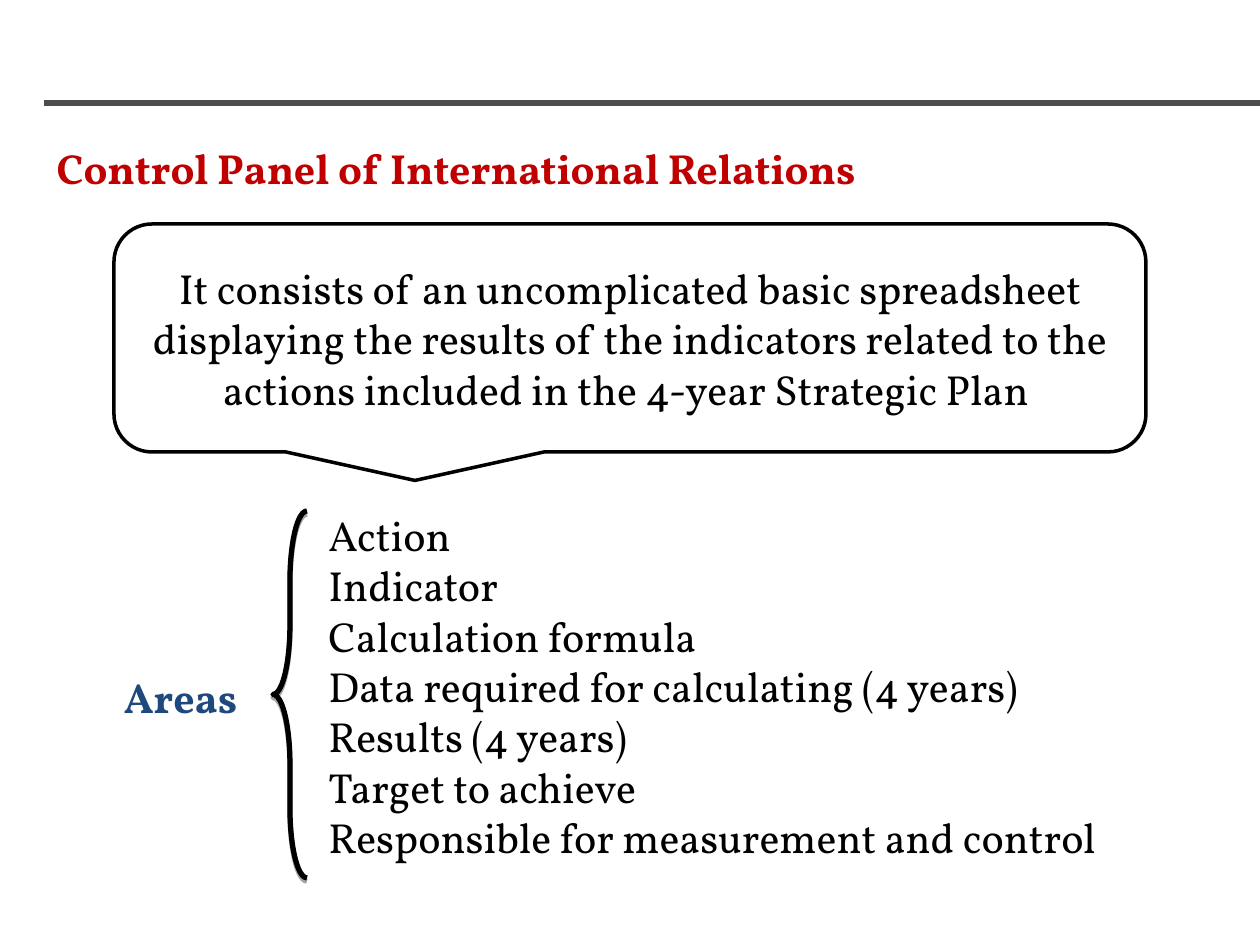
import dataclasses

import lxml.etree
import pptx
import pptx.dml.color
import pptx.enum.shapes
import pptx.enum.text
import pptx.oxml
import pptx.oxml.ns
import pptx.util

SHAPE = pptx.enum.shapes.MSO_SHAPE
ALIGN = pptx.enum.text.PP_ALIGN
ANCHOR = pptx.enum.text.MSO_ANCHOR

AREAS = [
    "Action",
    "Indicator",
    "Calculation formula",
    "Data required for calculating (4 years)",
    "Results (4 years)",
    "Target to achieve",
    "Responsible for measurement and control",
]
SUMMARY = (
    "It consists of an uncomplicated basic spreadsheet displaying the results of "
    "the indicators related to the actions included in the 4-year Strategic Plan "
)


@dataclasses.dataclass(frozen=True)
class Theme:
    """Colours, font and sizes of the slide."""

    face: str = "Vollkorn"
    size: int = 24
    ink: str = "000000"
    red: str = "C00000"
    blue: str = "1F497D"
    rule: str = "4D4D4D"
    thin: int = 2
    thick: int = 3


THEME = Theme()


def px(num):
    """Turn px into EMU."""
    return pptx.util.Emu(round(num * 914400 / 126))


def rgb(code):
    """Return the colour for a hex code."""
    return pptx.dml.color.RGBColor.from_string(code)


def write(shape, lines, color=THEME.ink, bold=False, align=ALIGN.LEFT, anchor=ANCHOR.TOP):
    """Fill a shape with evenly styled paragraphs."""
    frame = shape.text_frame
    frame.word_wrap = True
    frame.auto_size = pptx.enum.text.MSO_AUTO_SIZE.NONE
    frame.vertical_anchor = anchor
    frame.text = "\n".join(lines)
    for para in frame.paragraphs:
        para.alignment = align
        para.font.name = THEME.face
        para.font.size = pptx.util.Pt(THEME.size)
        para.font.bold = bold
        para.font.color.rgb = rgb(color)


def stroke(shape, color, width):
    """Set the line of a shape or connector."""
    shape.line.color.rgb = rgb(color)
    shape.line.width = pptx.util.Pt(width)


def outline(slide, kind, box, width):
    """Add an unfilled shape with a dark line."""
    shape = slide.shapes.add_shape(kind, *map(px, box))
    shape.shadow.inherit = False
    shape.fill.background()
    stroke(shape, THEME.ink, width)
    return shape


def label(slide, box, lines, **style):
    """Add a text box."""
    shape = slide.shapes.add_textbox(*map(px, box))
    write(shape, lines, **style)


def shade(shape):
    """Drop a soft shadow straight below a shape."""
    effect = shape._element.spPr.find(pptx.oxml.ns.qn("a:effectLst"))
    effect.append(pptx.oxml.parse_xml(
        f'<a:outerShdw {pptx.oxml.ns.nsdecls("a")} blurRad="0" dist="22860" '
        f'dir="5400000" rotWithShape="0"><a:srgbClr val="{THEME.ink}">'
        '<a:alpha val="35000"/></a:srgbClr></a:outerShdw>'
    ))


def header(slide, box):
    """Place the rule and the title below it."""
    left, top, width, height = box
    rule = slide.shapes.add_connector(
        pptx.enum.shapes.MSO_CONNECTOR.STRAIGHT,
        px(left), px(top), px(left + width), px(top),
    )
    stroke(rule, THEME.rule, THEME.thick)
    lxml.etree.SubElement(rule._element.spPr, pptx.oxml.ns.qn("a:effectLst"))
    title = slide.shapes.title
    title.left, title.top = px(left), px(top + 33)
    title.width, title.height = px(width - 59), px(height - 33)
    write(title, ["Control Panel of International Relations"], THEME.red, True)


def callout(slide, box):
    """Place the summary in a speech bubble."""
    shape = outline(slide, SHAPE.ROUNDED_RECTANGULAR_CALLOUT, box, THEME.thin)
    write(shape, [SUMMARY], align=ALIGN.CENTER, anchor=ANCHOR.MIDDLE)


def areas(slide, box):
    """Place the label, the brace and the list of areas."""
    left, top, width, height = box
    label(slide, (left + 252, top, width - 252, height - 6), AREAS, align=ALIGN.JUSTIFY)
    brace = outline(slide, SHAPE.LEFT_BRACE, (left + 209, top + 8, 34, height - 8), THEME.thick)
    brace.adjustments[0] = 2.05
    shade(brace)
    label(slide, (left, top + 162, 233, 63), ["Areas"], color=THEME.blue, bold=True, align=ALIGN.CENTER)


def main():
    """Build the slide and save it."""
    deck = pptx.Presentation()
    deck.slide_width, deck.slide_height = px(1260), px(945)
    slide = deck.slides.add_slide(deck.slide_layouts[5])
    header(slide, (44, 103, 1216, 96))
    callout(slide, (114, 224, 1032, 228))
    areas(slide, (64, 503, 1142, 375))
    deck.save("out.pptx")


if __name__ == "__main__":
    main()
